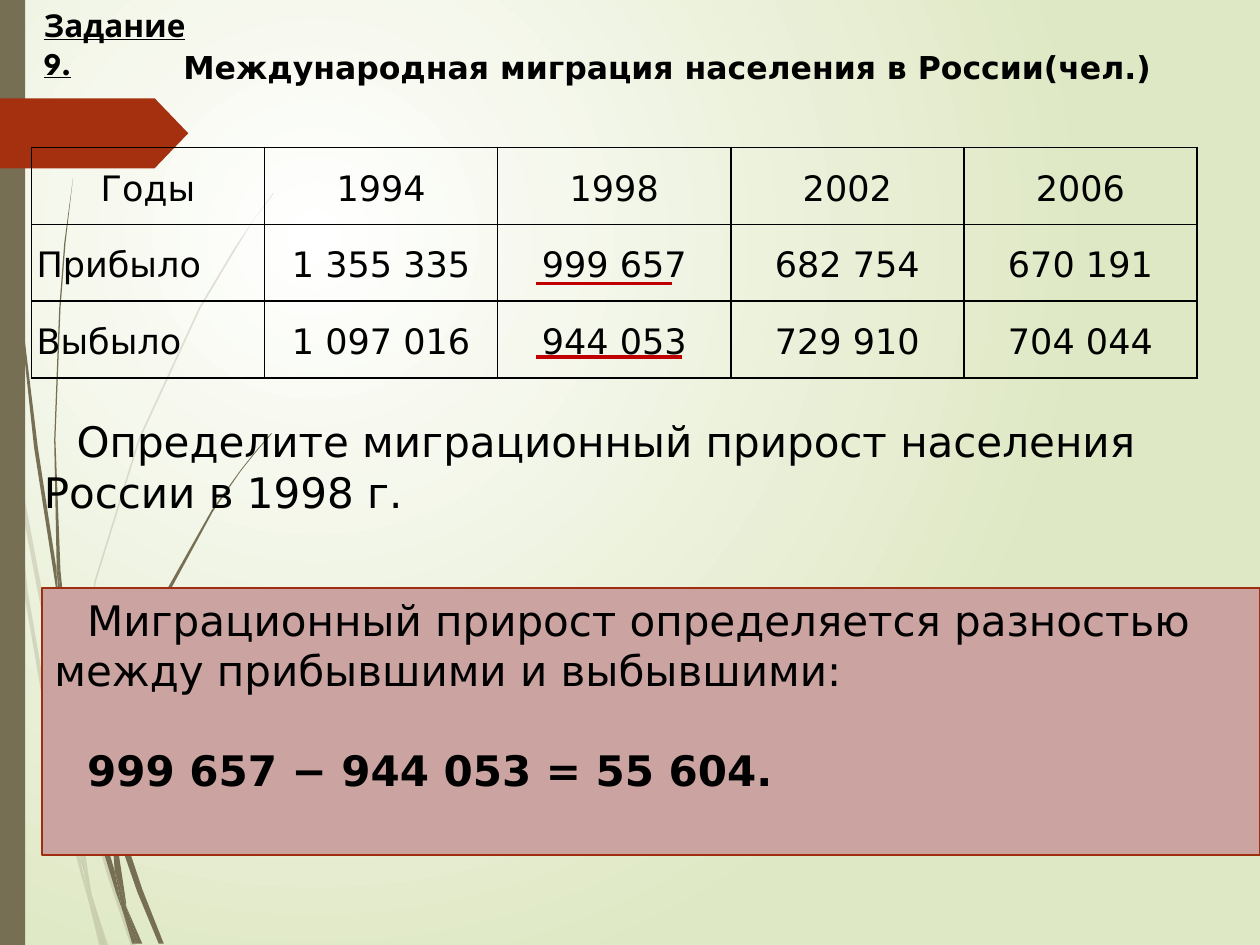
from lxml.etree import SubElement
from pptx import Presentation
from pptx.dml.color import RGBColor
from pptx.enum.shapes import MSO_CONNECTOR, MSO_SHAPE
from pptx.enum.text import MSO_ANCHOR, PP_ALIGN
from pptx.oxml.ns import qn
from pptx.util import Pt

COLORS = {"white": "FFFFFF", "pale": "DFE8C4", "olive": "766F54", "rust": "A53010",
          "panel": "CBA3A0", "panel_line": "9E2E0F", "mark": "C00000", "black": "000000"}
FONT = "DejaVu Sans"
INDENT = 18.72
UNIT = Pt(0.72)

FAINT_BLADES = [
    [(8, 350), (6, 322), (0, 282), (0, 299), (7, 344)],
    [(40, 522), (59, 599), (59, 586), (43, 520), (10, 345), (12, 376)],
    [(64, 607), (61, 596), (61, 610), (85, 694), (104, 751), (108, 751), (88, 692)],
    [(83, 751), (86, 751), (73, 711)],
    [(64, 683), (48, 619), (22, 469), (12, 376), (8, 350), (19, 470), (45, 621),
     (64, 693), (70, 714), (69, 707)],
    [(58, 599), (60, 646), (64, 683), (67, 692), (73, 711), (72, 706), (63, 646),
     (61, 610), (61, 608)],
    [(61, 584), (76, 462), (111, 349), (159, 245), (187, 198), (201, 175), (217, 154),
     (217, 153), (201, 175), (186, 197), (158, 244), (110, 348), (75, 461), (59, 584),
     (59, 586), (61, 596)],
    [(70, 714), (79, 751), (82, 751)],
    [(67, 692), (65, 683), (69, 707), (70, 714), (82, 751), (83, 751), (73, 711)],
]
DARK_BLADES = [
    [(5, 110), (14, 233), (27, 355), (46, 477), (47, 481), (45, 457), (45, 453),
     (30, 355), (15, 232), (6, 109), (4, 48), (3, 0), (2, 0), (3, 48)],
    [(94, 649), (91, 641), (91, 656), (109, 708), (126, 749), (130, 749), (113, 706)],
    [(91, 691), (81, 657), (60, 556), (53, 505), (47, 477), (56, 557), (77, 659),
     (92, 708), (97, 722), (96, 717)],
    [(50, 472), (48, 453), (44, 349), (48, 245), (52, 193), (58, 141), (51, 193),
     (47, 245), (43, 349), (45, 449), (49, 472)],
    [(110, 749), (113, 749), (100, 719)],
    [(47, 477), (53, 505), (50, 472), (49, 472), (45, 449), (45, 453)],
    [(91, 633), (103, 552), (131, 476), (169, 406), (191, 374), (203, 359), (216, 344),
     (215, 344), (203, 358), (191, 373), (168, 405), (129, 474), (101, 551), (88, 631),
     (91, 641)],
    [(97, 722), (105, 749), (108, 749)],
    [(88, 645), (91, 691), (96, 706), (100, 719), (100, 716), (91, 656), (90, 651)],
    [(96, 706), (91, 691), (96, 717), (97, 722), (108, 749), (110, 749), (100, 719)],
]
MIGRATION = [
    ["Годы", "1994", "1998", "2002", "2006"],
    ["Прибыло", "1 355 335", "999 657", "682 754", "670 191"],
    ["Выбыло", "1 097 016", "944 053", "729 910", "704 044"],
]


def rgb(name):
    """Return the named colour."""
    return RGBColor.from_string(COLORS[name])


def write(p, text, size=24, font=FONT, bold=False, underline=False,
          align=PP_ALIGN.LEFT, indent=0, before=0, spacing=None):
    """Write one formatted run into a paragraph."""
    r = p.add_run()
    r.text = text
    r.font.size, r.font.name = Pt(size), font
    r.font.bold, r.font.underline = bold, underline
    r.font.color.rgb = rgb("black")
    p.alignment, p.space_before, p.line_spacing = align, Pt(before), spacing
    pPr = p._p.get_or_add_pPr()
    pPr.set("marL", "0")
    pPr.set("indent", str(Pt(indent)))


def prepare_frame(sp):
    """Wrap the text of a shape, anchor it at the top and return its frame."""
    tf = sp.text_frame
    tf.word_wrap, tf.vertical_anchor = True, MSO_ANCHOR.TOP
    return tf


def add_text(s, box, text, **style):
    """Add a text box with one paragraph."""
    sp = s.shapes.add_textbox(*map(Pt, box))
    write(prepare_frame(sp).paragraphs[0], text, **style)


def paint(sp, fill, line=None, alpha=None):
    """Set fill, outline and optional opacity percentage of a shape."""
    sp.shadow.inherit = False
    sp.fill.solid()
    sp.fill.fore_color.rgb = rgb(fill)
    if alpha:
        clr = sp._element.spPr.find(".//" + qn("a:srgbClr"))
        SubElement(clr, qn("a:alpha")).set("val", str(alpha * 1000))
    if line:
        sp.line.color.rgb, sp.line.width = rgb(line), Pt(0.75)
    else:
        sp.line.fill.background()


def add_box(s, kind, box, fill, line=None):
    """Add a painted preset shape."""
    sp = s.shapes.add_shape(kind, *map(Pt, box))
    paint(sp, fill, line)
    return sp


def add_blades(s, blades, alpha=None):
    """Add grass blades as closed outlines."""
    for start, *rest in blades:
        builder = s.shapes.build_freeform(*start, scale=UNIT)
        builder.add_line_segments(rest, close=True)
        paint(builder.convert_to_shape(), "olive", alpha=alpha)


def set_background(s):
    """Fill the background with a circular gradient."""
    fill = s.background.fill
    fill.gradient()
    for stop, name in zip(fill.gradient_stops, ("white", "pale")):
        stop.color.rgb = rgb(name)
    grad = s.element.find(".//" + qn("a:gradFill"))
    grad.remove(grad.find(qn("a:lin")))
    circle = SubElement(grad, qn("a:path"))
    circle.set("path", "circle")
    focus = SubElement(circle, qn("a:fillToRect"))
    for side, val in zip("ltrb", (50000, 50000, 100000, 100000)):
        focus.set(side, str(val))


def set_borders(cell):
    """Draw a thin black border on all sides of a cell."""
    tcPr = cell._tc.get_or_add_tcPr()
    for i, side in enumerate(("lnL", "lnR", "lnT", "lnB")):
        ln = tcPr.makeelement(qn("a:" + side), {"w": str(Pt(1))})
        clr = SubElement(SubElement(ln, qn("a:solidFill")), qn("a:srgbClr"))
        clr.set("val", COLORS["black"])
        tcPr.insert(i, ln)


def add_migration_table(s):
    """Add the table of arrivals and departures."""
    rows, cols = len(MIGRATION), len(MIGRATION[0])
    table = s.shapes.add_table(rows, cols, Pt(18), Pt(84.24), Pt(666), Pt(131.76)).table
    table.first_row = table.horz_banding = False
    for row, values in zip(table.rows, MIGRATION):
        row.height = Pt(43.92)
        for j, (cell, text) in enumerate(zip(row.cells, values)):
            cell.fill.background()
            cell.vertical_anchor = MSO_ANCHOR.MIDDLE
            cell.margin_left = cell.margin_right = Pt(2.88)
            cell.margin_top = cell.margin_bottom = Pt(2.88)
            left = j == 0 and values is not MIGRATION[0]
            write(cell.text_frame.paragraphs[0], text, size=20, before=3.8, spacing=1.15,
                  align=PP_ALIGN.LEFT if left else PP_ALIGN.CENTER)
            set_borders(cell)


def add_underline(s, x1, x2, y):
    """Add a horizontal red line."""
    line = s.shapes.add_connector(MSO_CONNECTOR.STRAIGHT, Pt(x1), Pt(y), Pt(x2), Pt(y))
    line.line.color.rgb, line.line.width = rgb("mark"), Pt(2.25)
    SubElement(line._element.spPr, qn("a:effectLst"))


def main():
    """Build and save the slide."""
    prs = Presentation()
    prs.slide_width, prs.slide_height = Pt(720), Pt(540)
    s = prs.slides.add_slide(prs.slide_layouts[5])
    set_background(s)
    add_blades(s, FAINT_BLADES, alpha=20)
    add_blades(s, DARK_BLADES)
    add_box(s, MSO_SHAPE.RECTANGLE, (0, 0, 14.4, 540), "olive")
    pennant = add_box(s, MSO_SHAPE.PENTAGON, (0, 56.16, 107.6, 40), "rust")
    pennant.adjustments[0] = 0.48
    add_migration_table(s)

    title = s.shapes.title
    title.left, title.top, title.width, title.height = map(Pt, (36, 24, 672, 72.7))
    write(prepare_frame(title).paragraphs[0], "Международная миграция населения в России(чел.)",
          size=18, bold=True, align=PP_ALIGN.CENTER, indent=INDENT)
    add_text(s, (18, 0, 99.4, 28.8), "Задание 9.", size=18, font="League Spartan",
             bold=True, underline=True)
    add_text(s, (18, 234, 690, 65.5),
             "Определите миграционный прирост населения России в 1998 г.", indent=INDENT)

    panel = add_box(s, MSO_SHAPE.RECTANGLE, (24, 336, 696, 152.6), "panel", "panel_line")
    tf = prepare_frame(panel)
    write(tf.paragraphs[0], "Миграционный прирост определяется разностью между "
          "прибывшими и выбывшими:", indent=INDENT)
    write(tf.add_paragraph(), "999 657 − 944 053 = 55 604.", bold=True,
          indent=INDENT, before=28)
    add_underline(s, 306, 384, 162)
    add_underline(s, 306, 390, 204)
    prs.save("out.pptx")


if __name__ == "__main__":
    main()
